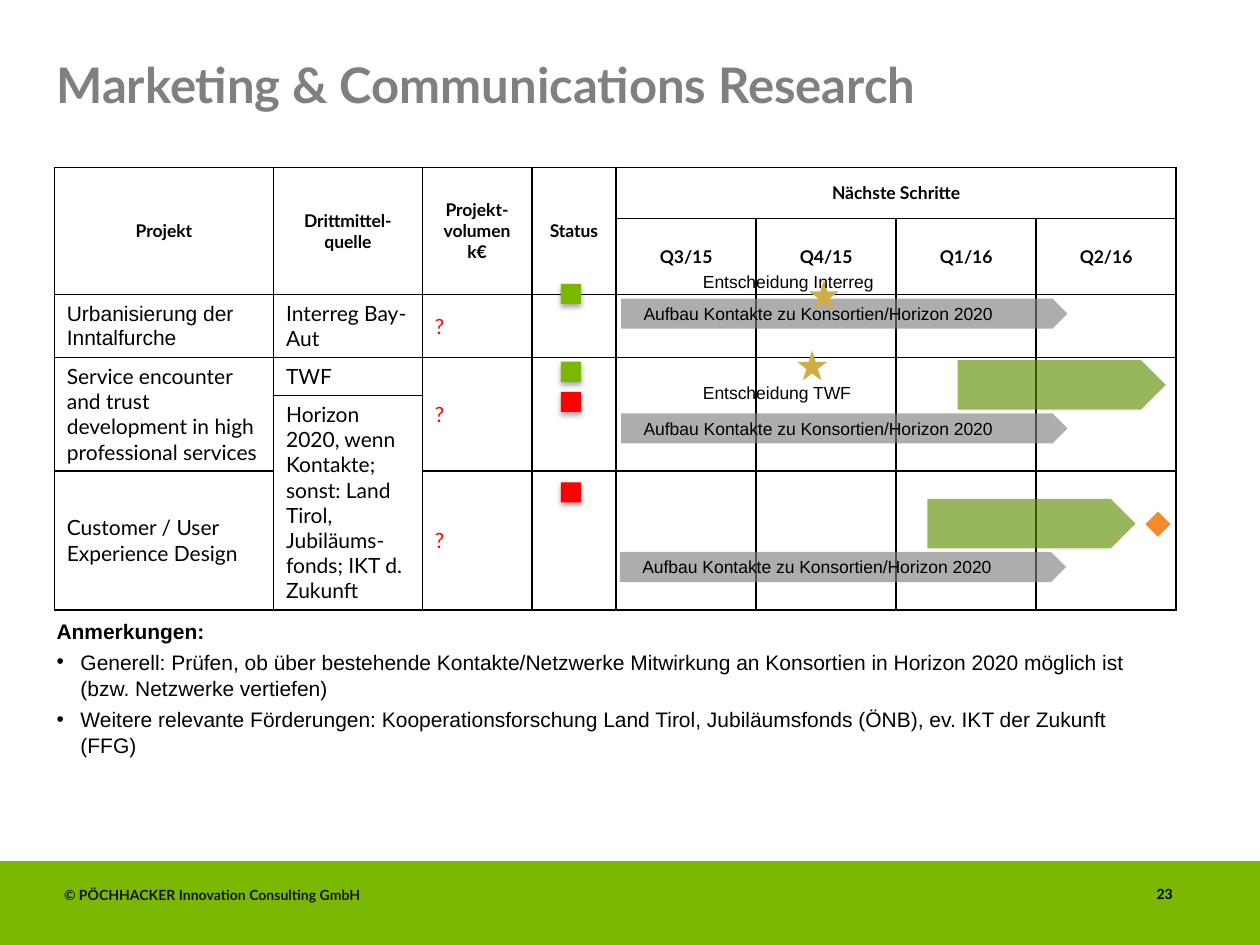
"""Build the project status slide with table, timeline marks and notes."""
from typing import NamedTuple, Optional

from lxml.etree import SubElement
from pptx import Presentation
from pptx.dml.color import RGBColor as RGB
from pptx.enum.shapes import MSO_SHAPE as SHAPE
from pptx.enum.text import MSO_ANCHOR as ANCHOR, PP_ALIGN as ALIGN
from pptx.oxml.ns import qn
from pptx.util import Pt

COLORS = {
    "band": "7BB801", "green": "7AB800", "red": "FF0000", "gold": "D1AD47",
    "gray": "808080", "olive": "5F8E00", "orange": "F6882E",
    "black": "000000", "footer": "181412", "white": "FFFFFF",
}
COLS = [125.3, 85, 62.6, 48.2] + [80] * 4
ROWS = [29.2, 43.4, 36, 21.6, 43, 79.4]
CONTACTS = "Aufbau Kontakte zu Konsortien/Horizon 2020"


class Style(NamedTuple):
    size: float
    font: str = "Lato"
    color: str = "black"
    bold: bool = False


HEAD = Style(10, bold=True)
BODY = Style(12)
ARIAL = Style(12, "Arial")
OPEN = Style(12, color="red")
LABEL = Style(10, "Arial")


class Cell(NamedTuple):
    row: int
    col: int
    lines: tuple = ()
    style: Style = BODY
    rows: int = 1
    cols: int = 1
    inset: float = 7.2


class Mark(NamedTuple):
    kind: SHAPE
    x: float
    y: float
    w: float
    h: float
    color: str
    alpha: Optional[int] = None
    shadow: bool = False


class Label(NamedTuple):
    x: float
    y: float
    w: float
    h: float
    text: str
    style: Style = LABEL
    anchor: ANCHOR = ANCHOR.TOP


CELLS = [
    Cell(0, 0, ("Projekt",), HEAD, rows=2),
    Cell(0, 1, ("Drittmittel-quelle",), HEAD, rows=2),
    Cell(0, 2, ("Projekt-volumen", "k€"), HEAD, rows=2, inset=2.9),
    Cell(0, 3, ("Status",), HEAD, rows=2),
    Cell(0, 4, ("Nächste Schritte",), HEAD, cols=4),
    *[Cell(1, 4 + i, (q,), HEAD)
      for i, q in enumerate(("Q3/15", "Q4/15", "Q1/16", "Q2/16"))],
    Cell(2, 0, ("Urbanisierung der Inntalfurche",), ARIAL),
    Cell(2, 1, ("Interreg Bay-Aut",)),
    Cell(2, 2, ("?",), OPEN),
    Cell(3, 0, ("Service encounter and trust development in high "
                "professional services",), rows=2),
    Cell(3, 1, ("TWF",)),
    Cell(3, 2, ("?",), OPEN, rows=2),
    *[Cell(3, c, rows=2) for c in range(3, 8)],
    Cell(4, 1, ("Horizon 2020, wenn Kontakte; sonst: Land Tirol, "
                "Jubiläums-fonds; IKT d. Zukunft",), rows=2),
    Cell(5, 0, ("Customer / User Experience Design",)),
    Cell(5, 2, ("?",), OPEN),
]
BARS = [(355, 170.6), (355, 236.2), (354.3, 315.4)]
MARKS = [
    *[Mark(SHAPE.PENTAGON, x, y, 255, 17.2, "gray", 64) for x, y in BARS],
    *[Mark(SHAPE.RECTANGLE, 320.5, y, 11.5, 11.5, c, shadow=True)
      for y, c in ((162.2, "green"), (206.7, "green"),
                   (223.9, "red"), (275.6, "red"))],
    *[Mark(SHAPE.STAR_5_POINT, x, y, 17.2, 17.2, "gold")
      for x, y in ((462.2, 159.9), (455.5, 200.2))],
    *[Mark(SHAPE.PENTAGON, x, y, 119, 28.3, "olive", 64)
      for x, y in ((547.2, 205.8), (529.9, 285.1))],
    Mark(SHAPE.FLOWCHART_DECISION, 654.5, 292.4, 14.4, 14.4, "orange"),
]
LABELS = [
    Label(25.2, 30.2, 617, 36, "Marketing & Communications Research",
          Style(28, color="gray", bold=True), ANCHOR.MIDDLE),
    Label(653.8, 502.6, 44.6, 17.3, "23", Style(8, bold=True)),
    Label(29.5, 503.3, 574, 23, "© PÖCHHACKER Innovation Consulting GmbH",
          Style(8, color="footer", bold=True)),
    Label(394.6, 151.2, 158.4, 19.4, "Entscheidung Interreg"),
    Label(394.6, 214.6, 158.4, 19.4, "Entscheidung TWF"),
    *[Label(x + 5.7, y - 1.1, 232.6, 19.4, CONTACTS) for x, y in BARS],
]
NOTES = [
    "Generell: Prüfen, ob über bestehende Kontakte/Netzwerke Mitwirkung an "
    "Konsortien in Horizon 2020 möglich ist (bzw. Netzwerke vertiefen)",
    "Weitere relevante Förderungen: Kooperationsforschung Land Tirol, "
    "Jubiläumsfonds (ÖNB), ev. IKT der Zukunft (FFG)",
]


def rgb(name: str) -> RGB:
    return RGB.from_string(COLORS[name])


def add_run(p, text: str, style: Style) -> None:
    r = p.add_run()
    r.text = text
    r.font.size, r.font.name, r.font.bold = Pt(style.size), style.font, style.bold
    r.font.color.rgb = rgb(style.color)


def add_mark(s, m: Mark) -> None:
    sp = s.shapes.add_shape(m.kind, Pt(m.x), Pt(m.y), Pt(m.w), Pt(m.h))
    sp.shadow.inherit = False
    sp.fill.solid()
    sp.fill.fore_color.rgb = rgb(m.color)
    sp.line.fill.background()
    props = sp._element.spPr
    if m.alpha:
        clr = props.find(".//" + qn("a:srgbClr"))
        SubElement(clr, qn("a:alpha"), val=str(m.alpha * 1000))
    if m.shadow:
        shadow = SubElement(props.find(qn("a:effectLst")), qn("a:outerShdw"),
                            blurRad=str(Pt(3.1)), dist=str(Pt(1.8)),
                            dir="5400000", rotWithShape="0")
        clr = SubElement(shadow, qn("a:srgbClr"), val=COLORS["black"])
        SubElement(clr, qn("a:alpha"), val="35000")


def add_box(s, x: float, y: float, w: float, h: float):
    tf = s.shapes.add_textbox(Pt(x), Pt(y), Pt(w), Pt(h)).text_frame
    tf.word_wrap = True
    return tf


def add_label(s, b: Label) -> None:
    tf = add_box(s, b.x, b.y, b.w, b.h)
    tf.vertical_anchor = b.anchor
    add_run(tf.paragraphs[0], b.text, b.style)


def add_notes(s) -> None:
    tf = add_box(s, 25.2, 349.2, 641, 141.8)
    p = tf.paragraphs[0]
    p.line_spacing = 1.05
    add_run(p, "Anmerkungen:", ARIAL._replace(bold=True))
    for text in NOTES:
        p = tf.add_paragraph()
        p.line_spacing, p.space_before = 1.05, Pt(2.4)
        props = p._p.get_or_add_pPr()
        props.set("marL", str(Pt(13.7)))
        props.set("indent", str(Pt(-13.7)))
        SubElement(props, qn("a:buFont"), typeface="Arial")
        SubElement(props, qn("a:buChar"), char="•")
        add_run(p, text, ARIAL)


def format_cell(cell) -> None:
    props = cell._tc.get_or_add_tcPr()
    for side in ("a:lnL", "a:lnR", "a:lnT", "a:lnB"):
        ln = SubElement(props, qn(side), w=str(Pt(1)))
        fill = SubElement(ln, qn("a:solidFill"))
        SubElement(fill, qn("a:srgbClr"), val=COLORS["black"])
    cell.fill.background()
    cell.vertical_anchor = ANCHOR.MIDDLE
    SubElement(cell.text_frame.paragraphs[0]._p, qn("a:endParaRPr"), sz="1000")


def fill_cell(tbl, c: Cell) -> None:
    cell = tbl.cell(c.row, c.col)
    if c.rows * c.cols > 1:
        cell.merge(tbl.cell(c.row + c.rows - 1, c.col + c.cols - 1))
    cell.margin_left = cell.margin_right = Pt(c.inset)
    tf = cell.text_frame
    for i, line in enumerate(c.lines):
        p = tf.add_paragraph() if i else tf.paragraphs[0]
        p.alignment = ALIGN.CENTER if c.style is HEAD else ALIGN.LEFT
        add_run(p, line, c.style)


def add_plan(s) -> None:
    tbl = s.shapes.add_table(len(ROWS), len(COLS), Pt(31), Pt(95.6),
                             Pt(sum(COLS)), Pt(sum(ROWS))).table
    tbl.first_row = tbl.horz_banding = False
    for col, w in zip(tbl.columns, COLS):
        col.width = Pt(w)
    for row, h in zip(tbl.rows, ROWS):
        row.height = Pt(h)
    for cell in tbl.iter_cells():
        format_cell(cell)
    for c in CELLS:
        fill_cell(tbl, c)


def main() -> None:
    prs = Presentation()
    prs.slide_width, prs.slide_height = Pt(720), Pt(540)
    s = prs.slides.add_slide(prs.slide_layouts[6])
    add_mark(s, Mark(SHAPE.RECTANGLE, 0, 492, 720, 48, "band"))
    add_plan(s)
    for m in MARKS:
        add_mark(s, m)
    for b in LABELS:
        add_label(s, b)
    add_notes(s)
    prs.save("out.pptx")


if __name__ == "__main__":
    main()
